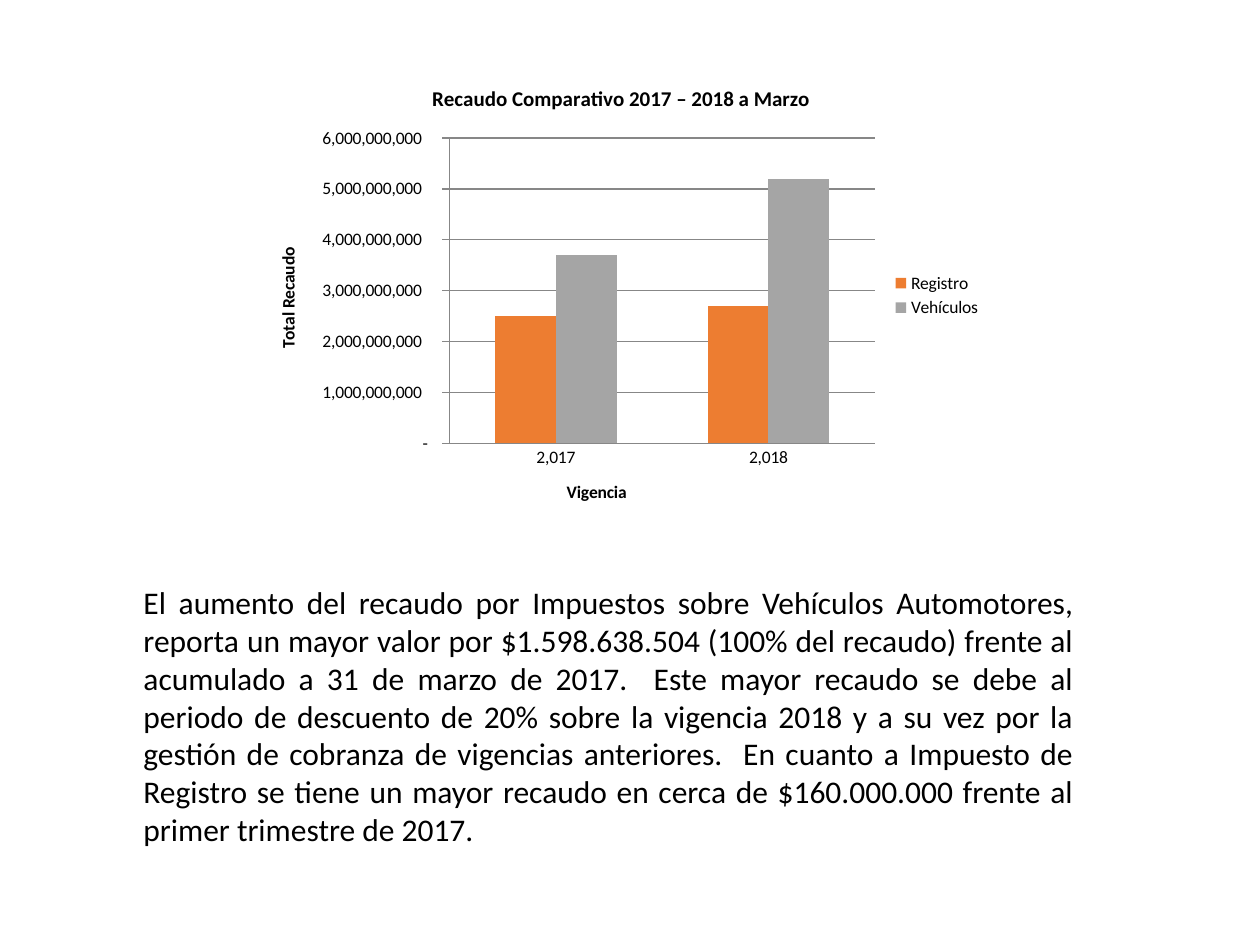
from lxml import etree
from pptx import Presentation
from pptx.chart.data import CategoryChartData
from pptx.dml.color import RGBColor
from pptx.enum.chart import XL_CHART_TYPE, XL_LEGEND_POSITION, XL_TICK_MARK
from pptx.enum.text import MSO_AUTO_SIZE, PP_ALIGN
from pptx.oxml import parse_xml
from pptx.oxml.ns import nsdecls
from pptx.util import Inches, Pt

COLUMNS = XL_CHART_TYPE.COLUMN_CLUSTERED
LEGEND_RIGHT = XL_LEGEND_POSITION.RIGHT
TICK_NONE, TICK_CROSS = XL_TICK_MARK.NONE, XL_TICK_MARK.CROSS
JUSTIFY = PP_ALIGN.JUSTIFY
GROW = MSO_AUTO_SIZE.SHAPE_TO_FIT_TEXT

BLACK = RGBColor(0, 0, 0)
GREY = RGBColor(0x87, 0x87, 0x87)
FONT = "Calibri"
YEAR_FORMAT = "#,##0"
AMOUNT_FORMAT = r'_-* #,##0\ _€_-;\-* #,##0\ _€_-;_-* "-"?'
SERIES = (
    ("Registro", (2_500_000_000, 2_700_000_000), RGBColor(0xED, 0x7D, 0x31)),
    ("Vehículos", (3_700_000_000, 5_200_000_000), RGBColor(0xA5, 0xA5, 0xA5)),
)
PLOT_LAYOUT = {"x": 0.27, "y": 0.16, "w": 0.57, "h": 0.66}
COMMENT = (
    "El aumento del recaudo por Impuestos sobre Vehículos Automotores, "
    "reporta un mayor valor por $1.598.638.504 (100% del recaudo) frente al "
    "acumulado a 31 de marzo de 2017.  Este mayor recaudo se debe al periodo "
    "de descuento de 20% sobre la vigencia 2018 y a su vez por la gestión de "
    "cobranza de vigencias anteriores.  En cuanto a Impuesto de Registro se "
    "tiene un mayor recaudo en cerca de $160.000.000 frente al primer "
    "trimestre de 2017."
)


def style_font(font, size, bold=False):
    font.name = FONT
    font.size = Pt(size)
    font.bold = bold
    font.color.rgb = BLACK


def set_title(owner, text, size):
    """Give a chart or an axis a bold title."""
    frame = (owner.chart_title if hasattr(owner, "chart_title")
             else owner.axis_title).text_frame
    frame.text = text
    style_font(frame.paragraphs[0].font, size, bold=True)


def style_axis(axis, title, number_format, tick):
    set_title(axis, title, 10)
    axis.major_tick_mark = tick
    axis.minor_tick_mark = TICK_NONE
    axis.tick_labels.number_format = number_format
    axis.tick_labels.number_format_is_linked = False
    axis.format.line.color.rgb = GREY
    axis.format.line.width = Pt(0.75)


def place_plot_area(chart):
    """Fix the inner plot area as fractions of the chart."""
    plot_area = chart.plots[0]._element.getparent()
    for old in plot_area.findall("{*}layout"):
        plot_area.remove(old)
    layout = parse_xml(
        f'<c:layout {nsdecls("c")}><c:manualLayout>'
        '<c:layoutTarget val="inner"/><c:xMode val="edge"/>'
        '<c:yMode val="edge"/></c:manualLayout></c:layout>')
    for name, fraction in PLOT_LAYOUT.items():
        item = etree.SubElement(layout[0], layout.tag.replace("layout", name))
        item.set("val", str(fraction))
    plot_area.insert(0, layout)


def add_revenue_chart(page):
    data = CategoryChartData(number_format=AMOUNT_FORMAT)
    data.categories = (2017, 2018)
    data.categories.number_format = YEAR_FORMAT
    for name, values, _ in SERIES:
        data.add_series(name, values)
    chart = page.shapes.add_chart(
        COLUMNS, Inches(1.97), Inches(0.51), Inches(5.92), Inches(3.67), data
    ).chart
    style_font(chart.font, 10)
    set_title(chart, "Recaudo Comparativo 2017 – 2018 a Marzo", 12)
    chart.has_legend = True
    chart.legend.position = LEGEND_RIGHT
    chart.legend.include_in_layout = False

    plot = chart.plots[0]
    plot.vary_by_categories = False
    plot.gap_width = 150
    plot.overlap = 0
    for series, (_, _, color) in zip(plot.series, SERIES):
        series.format.fill.solid()
        series.format.fill.fore_color.rgb = color

    style_axis(chart.category_axis, "Vigencia", YEAR_FORMAT, TICK_NONE)
    amounts = chart.value_axis
    style_axis(amounts, "Total Recaudo", AMOUNT_FORMAT, TICK_CROSS)
    amounts.minimum_scale = 0
    amounts.maximum_scale = 6_000_000_000
    amounts.major_unit = 1_000_000_000
    amounts.has_major_gridlines = True
    amounts.major_gridlines.format.line.color.rgb = GREY
    amounts.major_gridlines.format.line.width = Pt(0.75)
    place_plot_area(chart)


def add_comment(page):
    box = page.shapes.add_textbox(
        Inches(1.04), Inches(4.58), Inches(7.58), Inches(2.22))
    frame = box.text_frame
    frame.word_wrap = True
    frame.auto_size = GROW
    para = frame.paragraphs[0]
    para.text = COMMENT
    para.alignment = JUSTIFY
    style_font(para.font, 18)


def main():
    deck = Presentation()
    deck.slide_width, deck.slide_height = Inches(10), Inches(7.5)
    page = deck.slides.add_slide(deck.slide_layouts.get_by_name("Blank"))
    add_comment(page)
    add_revenue_chart(page)
    deck.save("out.pptx")


if __name__ == "__main__":
    main()
